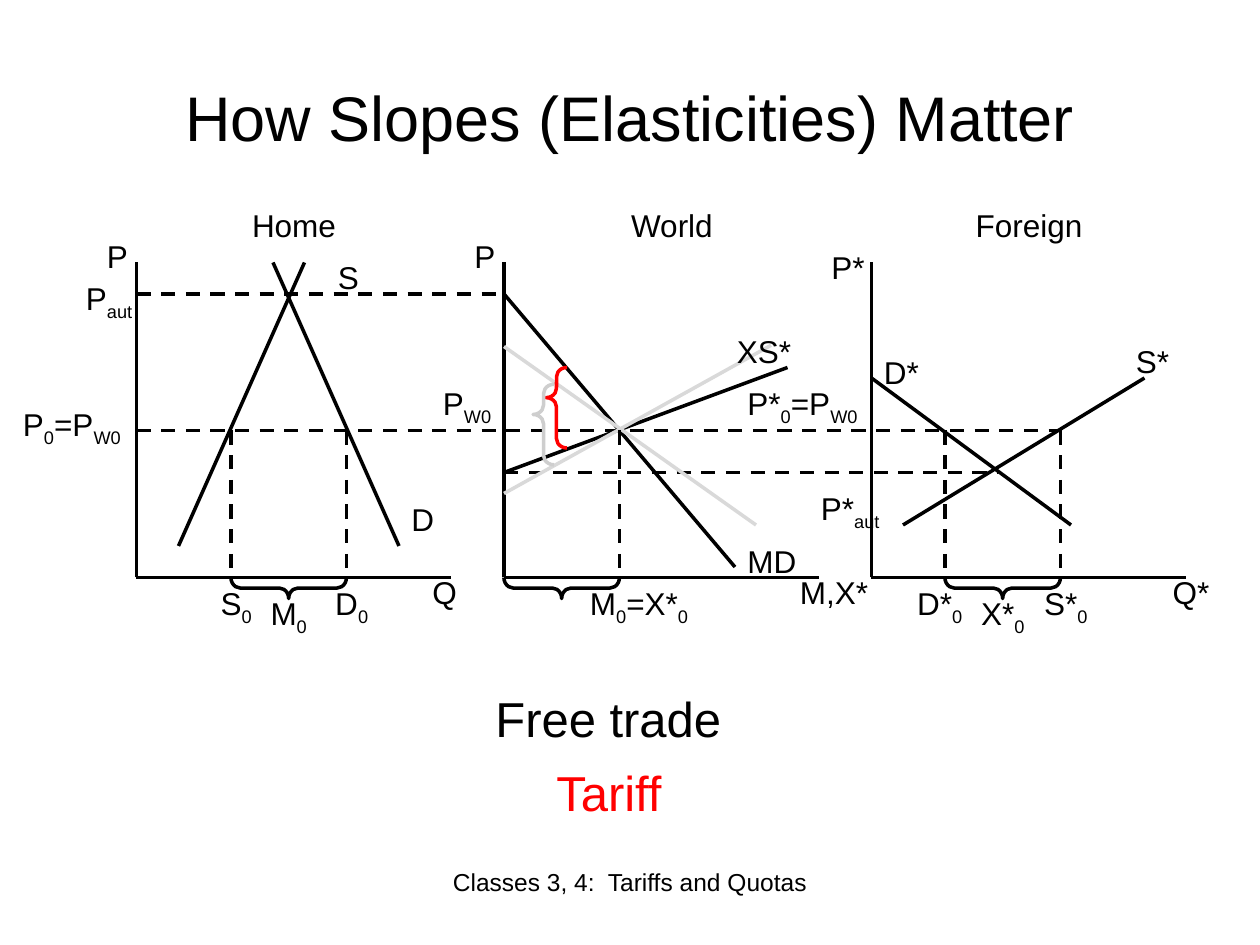
from pptx import Presentation
from pptx.dml.color import RGBColor
from pptx.enum.dml import MSO_LINE_DASH_STYLE as Dash
from pptx.enum.shapes import MSO_CONNECTOR as Connector, MSO_SHAPE as Shape
from pptx.enum.text import MSO_ANCHOR as Anchor, PP_ALIGN as Align
from pptx.oxml.xmlchemy import OxmlElement
from pptx.util import Pt

BLACK = RGBColor(0x00, 0x00, 0x00)
RED = RGBColor(0xFF, 0x00, 0x00)
PALE = RGBColor(0xD9, 0xD9, 0xD9)
SILVER = RGBColor(0xCE, 0xCE, 0xCE)

PANEL_TOP = 150
PANEL_LEFTS = [78, 288, 498]
AXIS = 180
FREE_PRICE = 96
TRADE = 66
BRACE_DEPTH = 12


def add_text(page, left, top, width, text, height=29, size=18, color=BLACK,
             align=Align.LEFT, anchor=Anchor.TOP, wrap=True):
    """Add a text box; every second part between underscores is a subscript."""
    box = page.shapes.add_textbox(Pt(left), Pt(top), Pt(width), Pt(height))
    frame = box.text_frame
    for name, value in {"word_wrap": wrap, "vertical_anchor": anchor}.items():
        setattr(frame, name, value)
    para = frame.paragraphs[0]
    para.alignment = align
    for index, part in enumerate(text.split("_")):
        span = para.add_run()
        span.text = part
        for name, value in {"name": "Arial", "size": Pt(size)}.items():
            setattr(span.font, name, value)
        span.font.color.rgb = color
        if index % 2:
            span.font._element.set("baseline", "-25000")


def add_line(page, start, end, color=BLACK, dashed=False):
    """Join two points with a straight line."""
    line = page.shapes.add_connector(
        Connector.STRAIGHT, *(Pt(value) for value in (*start, *end)))
    line.line.color.rgb = color
    line.line.width = Pt(2)
    if dashed:
        line.line.dash_style = Dash.DASH
    line._element.spPr.append(OxmlElement("a:effectLst"))


def add_brace(page, left, top, height, color=BLACK, tip=0.5):
    """Add a brace that points left and return it."""
    brace = page.shapes.add_shape(
        Shape.LEFT_BRACE, Pt(left), Pt(top), Pt(BRACE_DEPTH), Pt(height))
    brace.adjustments[0] = 0.444
    brace.adjustments[1] = tip
    brace.shadow.inherit = False
    brace.fill.background()
    brace.line.color.rgb = color
    brace.line.width = Pt(2)
    return brace


def add_panel(page, left, top, heading, curves, drops, bracket, labels):
    """Place axes, curves, quantity drops, trade bracket and labels in a panel."""
    def at(point):
        """Shift a panel point to the slide."""
        return left + point[0], top + point[1]

    for end in [(AXIS, AXIS), (0, 0)]:
        add_line(page, at((0, AXIS)), at(end))
    for start, end, color in curves:
        add_line(page, at(start), at(end), color)
    for drop in drops:
        add_line(page, at((drop, FREE_PRICE)), at((drop, AXIS)), dashed=True)
    middle = bracket + TRADE / 2
    brace = add_brace(page, left + middle - BRACE_DEPTH / 2,
                      top + AXIS + BRACE_DEPTH / 2 - TRADE / 2, TRADE)
    brace.rotation = 270
    add_text(page, *at((heading[1], -36)), 84, heading[0], align=Align.CENTER)
    for text, x, y, width, align in labels:
        add_text(page, *at((x, y)), width, text, align=align)


def add_home(page, left, top):
    """Draw the home market."""
    add_panel(
        page, left, top, ("Home", 48),
        curves=[((24, 162), (96, 0), BLACK), ((150, 162), (78, 0), BLACK)],
        drops=[54, 120], bracket=54,
        labels=[("P", -24, -18, 54, Align.LEFT),
                ("S", 108, -6, 54, Align.LEFT),
                ("D", 150, 132, 54, Align.LEFT),
                ("P_aut", -36, 6, 54, Align.LEFT),
                ("P_0_=P_W0", -72, 78, 90, Align.LEFT),
                ("Q", 162, 174, 54, Align.LEFT),
                ("S_0", 36, 180, 42, Align.CENTER),
                ("D_0", 102, 180, 42, Align.CENTER),
                ("M_0", 66, 186, 42, Align.CENTER)])


def add_world(page, left, top):
    """Draw the world market with the steep and flat curves and tariff braces."""
    add_panel(
        page, left, top, ("World", 54),
        curves=[((132, 174), (0, 18), BLACK), ((0, 120), (162, 60), BLACK),
                ((144, 150), (0, 48), PALE), ((0, 132), (152.6, 47.3), PALE)],
        drops=[66], bracket=0,
        labels=[("P", -24, -18, 54, Align.LEFT),
                ("MD", 132, 156, 54, Align.LEFT),
                ("XS*", 126, 36, 54, Align.LEFT),
                ("P_W0", -42, 66, 54, Align.LEFT),
                ("P*_0_=P_W0", 132, 66, 90, Align.LEFT),
                ("M,X*", 162, 174, 54, Align.LEFT),
                ("M_0_=X*_0", 42, 180, 72, Align.LEFT)])
    for x, y, color in [(24, 60, RED), (16.6, 69.6, SILVER)]:
        brace = add_brace(page, left + x, top + y, 46, color, tip=0.625)
        brace._element.spPr.xfrm.set("flipV", "1")


def add_foreign(page, left, top):
    """Draw the foreign market."""
    add_panel(
        page, left, top, ("Foreign", 48),
        curves=[((18, 150), (156, 66), BLACK), ((114, 150), (0, 66), BLACK)],
        drops=[42, 108], bracket=42,
        labels=[("P*", -30, -12, 54, Align.LEFT),
                ("S*", 144, 42, 54, Align.LEFT),
                ("D*", 0, 48, 54, Align.LEFT),
                ("P*_aut", -36, 126, 54, Align.LEFT),
                ("Q*", 165, 174, 54, Align.LEFT),
                ("D*_0", 12, 180, 54, Align.CENTER),
                ("S*_0", 84, 180, 54, Align.CENTER),
                ("X*_0", 48, 186, 54, Align.CENTER)])


def add_price_lines(page, left, top):
    """Draw the dashed price levels that link the panels."""
    for start, end, level in [(0, 210, 18), (0, 528, FREE_PRICE), (210, 492, 120)]:
        add_line(page, (left + start, top + level), (left + end, top + level),
                 dashed=True)


def add_legend(page, left, top):
    """Place the two captions under the panels."""
    add_text(page, left, top, 145, "Free trade", 41, 28, wrap=False)
    add_text(page, left, top + 42, 144, "Tariff", 41, 28, RED, Align.CENTER)


def main():
    """Build and save the deck."""
    deck = Presentation()
    deck.slide_width, deck.slide_height = Pt(720), Pt(540)
    page = deck.slides.add_slide(deck.slide_layouts[6])
    add_text(page, 36, 21.6, 648, "How Slopes (Elasticities) Matter", 90, 36,
             align=Align.CENTER, anchor=Anchor.MIDDLE)
    add_price_lines(page, PANEL_LEFTS[0], PANEL_TOP)
    for add_market, left in zip([add_home, add_world, add_foreign], PANEL_LEFTS):
        add_market(page, left, PANEL_TOP)
    add_legend(page, 276, 390)
    add_text(page, 246, 492, 228, "Classes 3, 4:  Tariffs and Quotas", 37, 14,
             align=Align.CENTER)
    deck.save("out.pptx")


if __name__ == "__main__":
    main()
